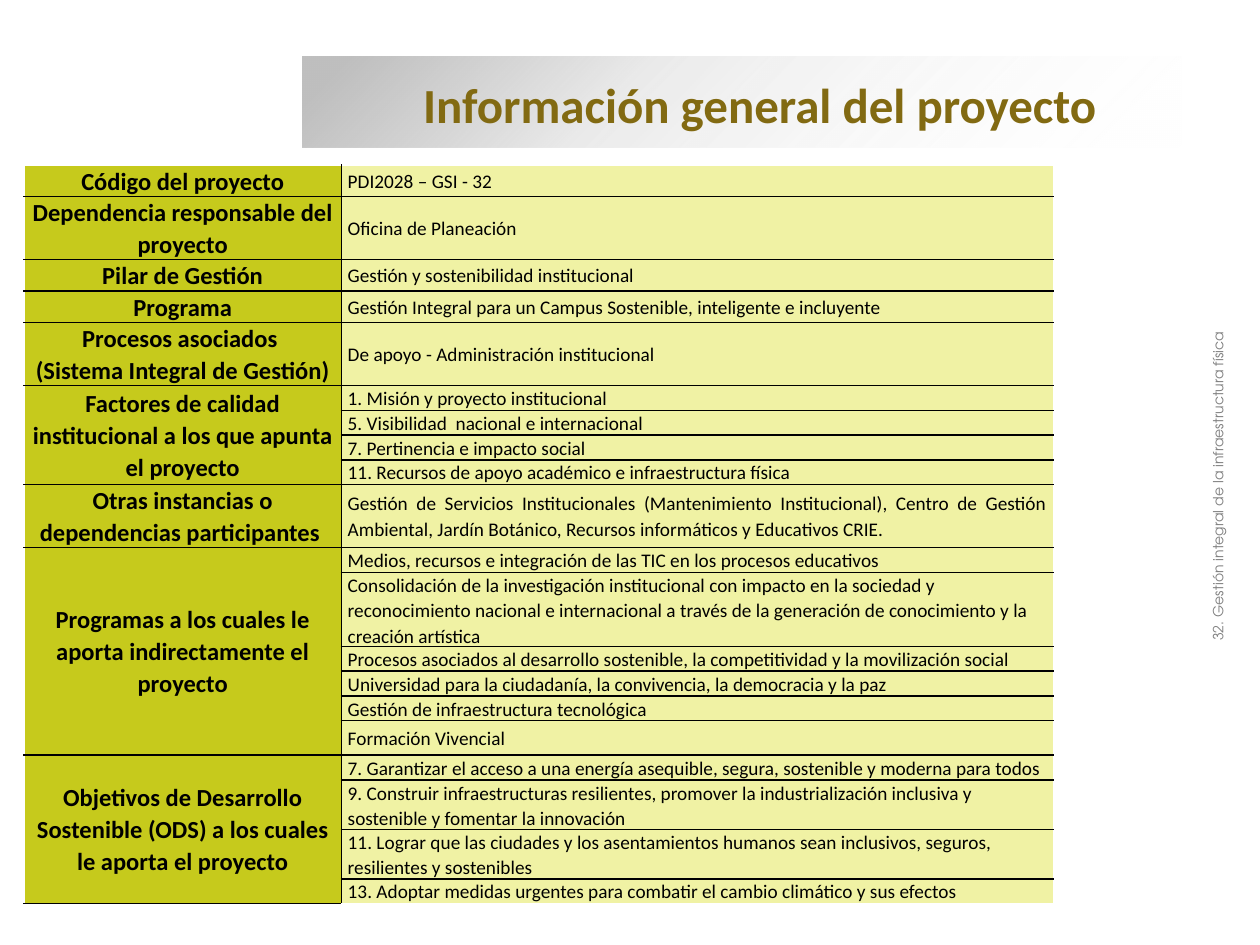
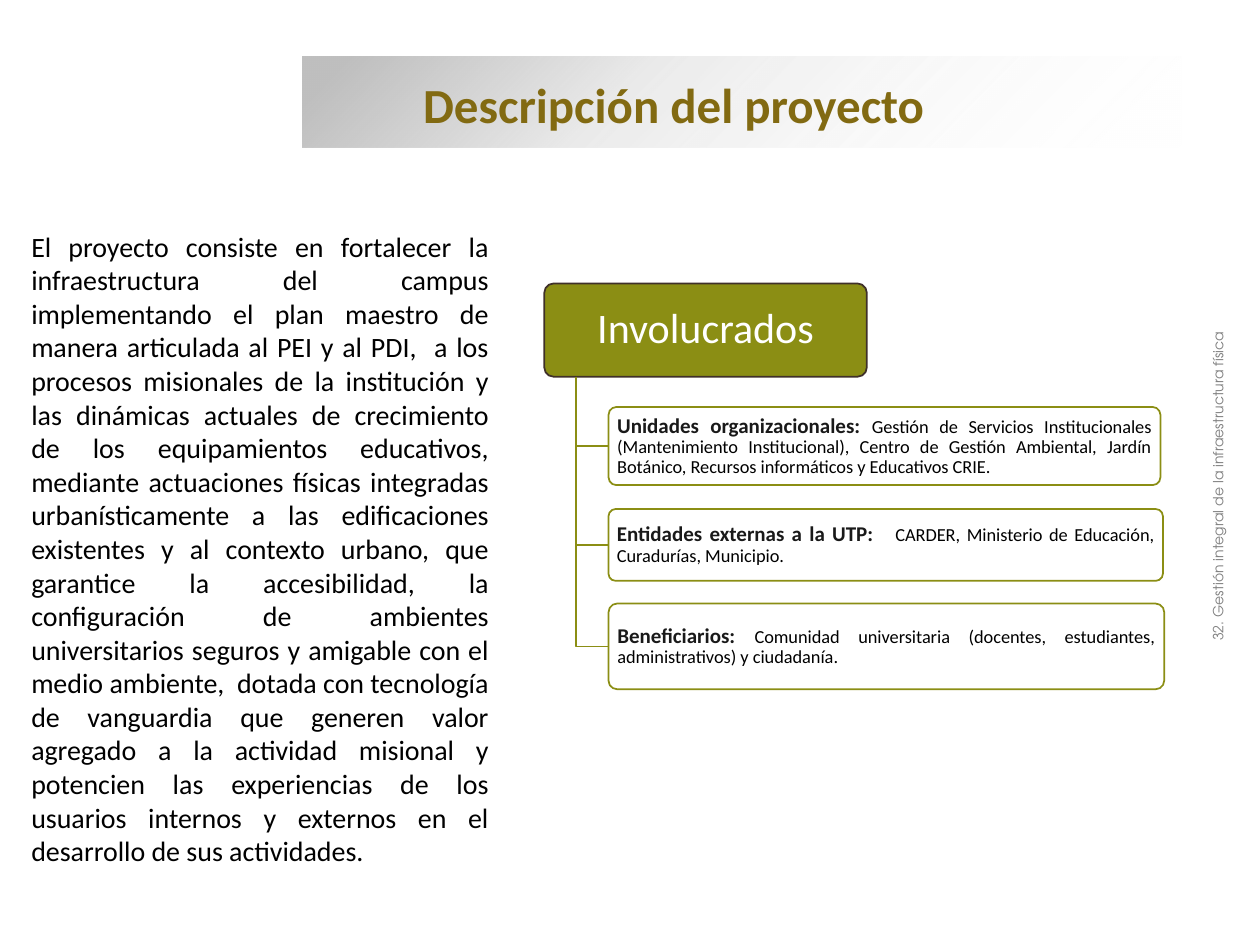
from dataclasses import dataclass
from typing import NamedTuple

from lxml import etree
from pptx import Presentation
from pptx.dml.color import RGBColor
from pptx.enum.shapes import MSO_SHAPE
from pptx.enum.text import MSO_ANCHOR, PP_ALIGN
from pptx.oxml import parse_xml
from pptx.oxml.ns import nsdecls, qn
from pptx.util import Emu, Inches, Pt

RECT, ROUND = MSO_SHAPE.RECTANGLE, MSO_SHAPE.ROUNDED_RECTANGLE
LEFT, CENTER, JUST = PP_ALIGN.LEFT, PP_ALIGN.CENTER, PP_ALIGN.JUSTIFY
TOP, MIDDLE = MSO_ANCHOR.TOP, MSO_ANCHOR.MIDDLE

COLS, ROWS = 100, 75  # grid of the whole slide
WIDE, HIGH = Inches(10), Inches(7.5)


@dataclass(frozen=True)
class Theme:
    body: str = "Calibri"
    side: str = "TeX Gyre Adventor"
    gold: str = "826A12"
    olive: str = "8B8E14"
    lime: str = "C6CA1C"
    pale: str = "F0F2A4"
    brown: str = "3F3029"
    dark: str = "191919"
    black: str = "000000"
    white: str = "FFFFFF"
    gray: str = "808080"
    silver: str = "BFBFBF"
    title: float = 28
    root: float = 24
    prose: float = 16
    label: float = 14
    lead: float = 12
    cell: float = 11
    note: float = 10.5
    foot: float = 8


T = Theme()


class Box(NamedTuple):
    col: float
    row: float
    cols: float
    rows: float


class Run(NamedTuple):
    text: str
    size: float
    color: str = T.black
    bold: bool = False
    font: str = T.body


class Item(NamedTuple):
    text: str
    lines: float = 1
    align: PP_ALIGN = LEFT


class Topic(NamedTuple):
    label: str
    lines: int
    items: list[Item]


class Node(NamedTuple):
    box: Box
    lead: str
    text: str


BAND = Box(24, 4.5, 69.8, 7.2)
HEAD = Box(32.6, 5.4, 62, 5.7)
SIDE = Box(72.5, 37.4, 48.4, 2.4)
PROSE = Box(1.5, 17.7, 38.3, 52.2)
ROOT = Box(43.2, 22.5, 25.6, 7.4)
GRID = Box(1.9, 13.1, 81.7, 58.5)
SPLIT = 25.2  # columns of the label side
LABEL_LINE, ITEM_LINE = 2.5, 1.95  # rows per line of text
STEM = 45.7

FOOT = "32. Gestión integral de la infraestructura física"
UNITS = ("Gestión de Servicios Institucionales (Mantenimiento Institucional), Centro de Gestión "
         "Ambiental, Jardín Botánico, Recursos informáticos y Educativos CRIE.")

TOPICS = [
    Topic("Código del proyecto", 1, [Item("PDI2028 – GSI - 32")]),
    Topic("Dependencia responsable del proyecto", 2, [Item("Oficina de Planeación")]),
    Topic("Pilar de Gestión", 1, [Item("Gestión y sostenibilidad institucional")]),
    Topic("Programa", 1, [Item(
        "Gestión Integral para un Campus Sostenible, inteligente e incluyente", 1, JUST)]),
    Topic("Procesos asociados \n(Sistema Integral de Gestión)", 2,
          [Item("De apoyo - Administración institucional")]),
    Topic("Factores de calidad institucional a los que apunta el proyecto", 3, [
        Item("1. Misión y proyecto institucional"),
        Item("5. Visibilidad  nacional e internacional"),
        Item("7. Pertinencia e impacto social"),
        Item("11. Recursos de apoyo académico e infraestructura física")]),
    Topic("Otras instancias o dependencias participantes ", 2, [Item(UNITS, 2, JUST)]),
    Topic("Programas a los cuales le aporta indirectamente el proyecto", 3, [
        Item("Medios, recursos e integración de las TIC en los procesos educativos"),
        Item("Consolidación de la investigación institucional con impacto en la sociedad y "
             "reconocimiento nacional e internacional a través de la generación de conocimiento "
             "y la creación artística", 3),
        Item("Procesos asociados al desarrollo sostenible, la competitividad y la "
             "movilización social"),
        Item("Universidad para la ciudadanía, la convivencia, la democracia y la paz"),
        Item("Gestión de infraestructura tecnológica"),
        Item("Formación Vivencial", 1.4)]),
    Topic("Objetivos de Desarrollo Sostenible (ODS) a los cuales le aporta el proyecto", 3, [
        Item("7. Garantizar el acceso a una energía asequible, segura, sostenible y moderna "
             "para todos"),
        Item("9. Construir infraestructuras resilientes, promover la industrialización "
             "inclusiva y sostenible y fomentar la innovación", 2),
        Item("11. Lograr que las ciudades y los asentamientos humanos sean inclusivos, "
             "seguros, resilientes y sostenibles", 2),
        Item("13. Adoptar medidas urgentes para combatir el cambio climático y sus efectos")]),
]

NODES = [
    Node(Box(48.3, 32.3, 43.8, 6.2), "Unidades organizacionales: ", UNITS),
    Node(Box(48.3, 40.4, 44, 5.7), "Entidades externas a la UTP:   ",
         "CARDER, Ministerio de Educación, Curadurías, Municipio."),
    Node(Box(48.3, 47.9, 44.1, 6.8), "Beneficiarios: ",
         "Comunidad universitaria (docentes, estudiantes, administrativos) y ciudadanía."),
]

ABOUT = (
    "El proyecto consiste en fortalecer la infraestructura del campus implementando el plan "
    "maestro de manera articulada al PEI y al PDI,  a los procesos misionales de la institución "
    "y las dinámicas actuales de crecimiento de los equipamientos educativos, mediante "
    "actuaciones físicas integradas urbanísticamente a las edificaciones existentes y al "
    "contexto urbano, que garantice la accesibilidad, la configuración de ambientes "
    "universitarios seguros y amigable con el medio ambiente,  dotada con tecnología de "
    "vanguardia que generen valor agregado a la actividad misional y potencien las experiencias "
    "de los usuarios internos y externos en el desarrollo de sus actividades.")


def across(cols: float) -> Emu:
    return Emu(round(WIDE * cols / COLS))


def down(rows: float) -> Emu:
    return Emu(round(HIGH * rows / ROWS))


def place(box: Box) -> tuple[Emu, Emu, Emu, Emu]:
    return across(box.col), down(box.row), across(box.cols), down(box.rows)


def rgb(color: str) -> RGBColor:
    return RGBColor.from_string(color)


def write(frame, runs: list[Run], align=LEFT, pitch: float = 1.0) -> None:
    """Fill the first paragraph; a newline in a run becomes a line break."""
    para = frame.paragraphs[0]
    para.alignment, para.line_spacing = align, pitch
    for part in runs:
        for i, line in enumerate(part.text.split("\n")):
            if i:
                para.add_line_break()
            run = para.add_run()
            run.text = line
            font = run.font
            font.name, font.size, font.bold = part.font, Pt(part.size), part.bold
            font.color.rgb = rgb(part.color)


def add_text(slide, box: Box, run: Run, align=LEFT, anchor=TOP, turn: float = 0) -> None:
    shape = slide.shapes.add_textbox(*place(box))
    shape.rotation = turn
    frame = shape.text_frame
    frame.word_wrap, frame.vertical_anchor = True, anchor
    write(frame, [run], align)


def add_band(slide) -> None:
    """Title band whose gray fades out to the lower right."""
    band = slide.shapes.add_shape(RECT, *place(BAND))
    band.shadow.inherit = False
    band.line.fill.background()
    stops = "".join(
        f'<a:gs pos="{pos * 1000}"><a:srgbClr val="{color}">'
        f'<a:alpha val="{alpha * 1000}"/></a:srgbClr></a:gs>'
        for pos, color, alpha in [(5, T.silver, 100), (37, T.silver, 31), (100, T.white, 0)])
    fill = parse_xml(f'<a:gradFill {nsdecls("a")} rotWithShape="1"><a:gsLst>{stops}</a:gsLst>'
                     '<a:lin ang="2700000" scaled="0"/></a:gradFill>')
    band._element.spPr.find(qn("a:prstGeom")).addnext(fill)


def add_page(deck, title: str):
    slide = deck.slides.add_slide(deck.slide_layouts[6])
    add_band(slide)
    add_text(slide, HEAD, Run(title, T.title, T.gold, True), anchor=MIDDLE)
    add_text(slide, SIDE, Run(FOOT, T.foot, T.gray, font=T.side), CENTER, turn=270)
    return slide


def add_edges(cell, sides: list[str]) -> None:
    props = cell._tc.get_or_add_tcPr()
    for side in sides:
        line = etree.SubElement(props, qn(f"a:ln{side}"), w=str(Pt(1)))
        fill = etree.SubElement(line, qn("a:solidFill"))
        etree.SubElement(fill, qn("a:srgbClr"), val=T.black)


def style(cell, fill: str, inset: float) -> None:
    cell.margin_left = cell.margin_right = across(inset)
    cell.margin_top = cell.margin_bottom = 0
    cell.vertical_anchor = MIDDLE
    cell.fill.solid()
    cell.fill.fore_color.rgb = rgb(fill)


def add_topics(slide) -> None:
    count = sum(len(topic.items) for topic in TOPICS)
    table = slide.shapes.add_table(count, 2, *place(GRID)).table
    table.first_row = table.horz_banding = False
    table.columns[0].width = across(SPLIT)
    table.columns[1].width = across(GRID.cols - SPLIT)
    for row in range(count):
        rules = ["T"] * (row > 0) + ["B"] * (row < count - 1)
        for col, (side, fill, inset) in enumerate([("R", T.lime, 0.4), ("L", T.pale, 0.5)]):
            cell = table.cell(row, col)
            add_edges(cell, [side] + rules)
            style(cell, fill, inset)
    row = 0
    for topic in TOPICS:
        size = len(topic.items)
        least = topic.lines * LABEL_LINE / size
        head = table.cell(row, 0)
        if size > 1:
            head.merge(table.cell(row + size - 1, 0))
        write(head.text_frame, [Run(topic.label, T.label, bold=True)], CENTER, 1.07)
        for item in topic.items:
            table.rows[row].height = down(max(item.lines * ITEM_LINE, least if size == 1 else 0))
            write(table.cell(row, 1).text_frame, [Run(item.text, T.cell)], item.align, 1.07)
            row += 1


def add_card(slide, box: Box, fill: str, edge: str, runs: list[Run], align) -> None:
    card = slide.shapes.add_shape(ROUND, *place(box))
    card.adjustments[0] = 0.1
    card.shadow.inherit = False
    card.fill.solid()
    card.fill.fore_color.rgb = rgb(fill)
    card.line.color.rgb, card.line.width = rgb(edge), Pt(1)
    frame = card.text_frame
    frame.word_wrap, frame.vertical_anchor = True, MIDDLE
    frame.margin_left = frame.margin_right = across(0.5)
    frame.margin_top = frame.margin_bottom = down(0.4)
    write(frame, runs, align, 0.9)


def add_elbow(slide, box: Box) -> None:
    """Line from the foot of the root card to the left middle of a box."""
    mid = down(box.row + box.rows / 2)
    path = slide.shapes.build_freeform(across(STEM), down(ROOT.row + ROOT.rows))
    path.add_line_segments([(across(STEM), mid), (across(box.col), mid)], close=False)
    elbow = path.convert_to_shape()
    elbow.shadow.inherit = False
    elbow.fill.background()
    elbow.line.color.rgb, elbow.line.width = rgb(T.olive), Pt(1)


def add_tree(slide) -> None:
    add_card(slide, ROOT, T.olive, T.brown, [Run("Involucrados", T.root, T.white)], CENTER)
    for node in NODES:
        add_elbow(slide, node.box)
        runs = [Run(node.lead, T.lead, T.dark, True), Run(node.text, T.note)]
        add_card(slide, node.box, T.white, T.olive, runs, JUST)


def main() -> None:
    deck = Presentation()
    deck.slide_width, deck.slide_height = WIDE, HIGH
    add_topics(add_page(deck, "Información general del proyecto"))
    about = add_page(deck, "Descripción del proyecto")
    add_tree(about)
    add_text(about, PROSE, Run(ABOUT, T.prose), JUST)
    deck.save("out.pptx")


if __name__ == "__main__":
    main()
